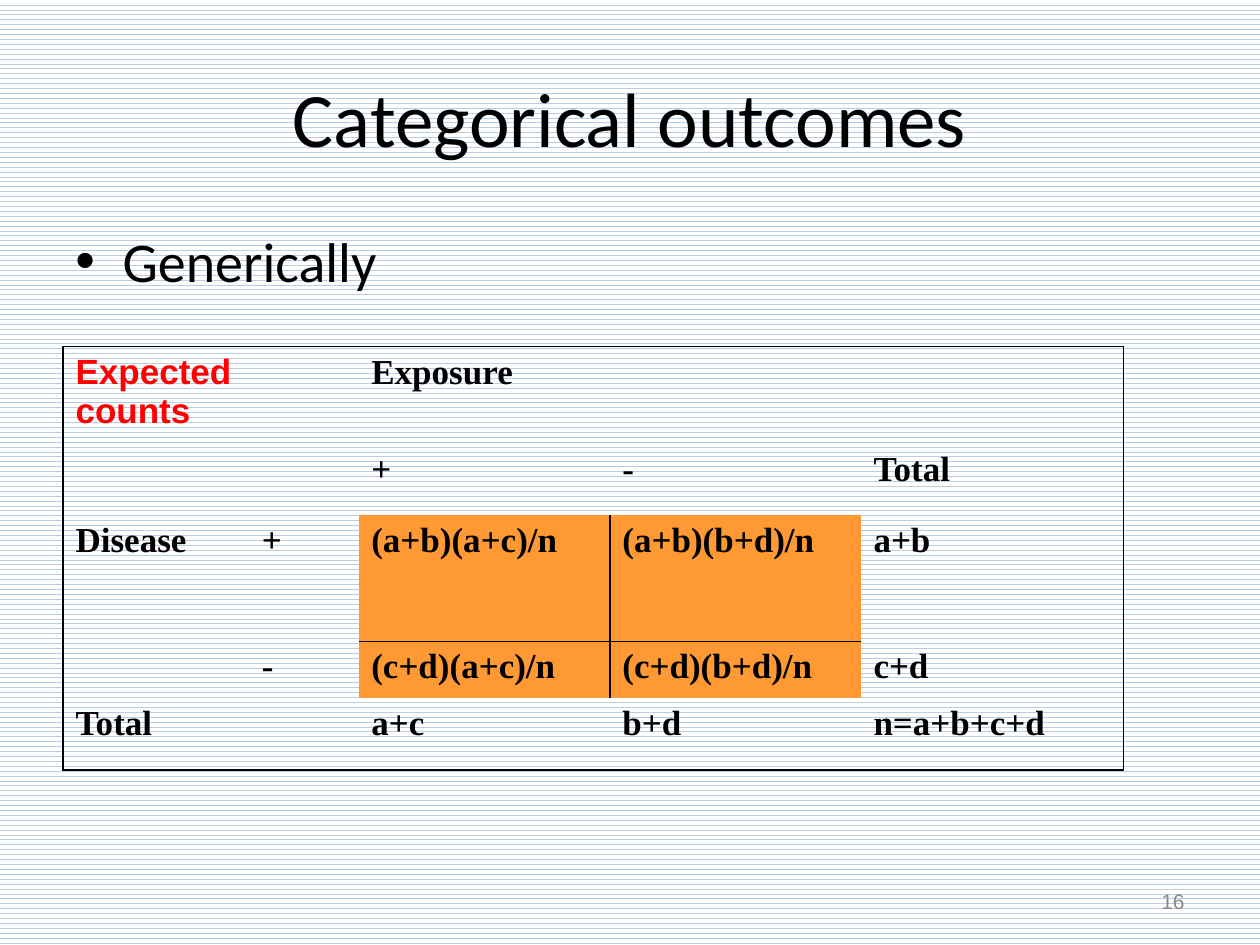
"""Build the slide on expected counts for categorical outcomes."""
from lxml.etree import SubElement
from pptx import Presentation
from pptx.dml.color import RGBColor
from pptx.enum.dml import MSO_PATTERN
from pptx.enum.text import MSO_ANCHOR, PP_ALIGN
from pptx.oxml.ns import qn
from pptx.util import Pt

BLACK = RGBColor(0x00, 0x00, 0x00)
WHITE = RGBColor(0xFF, 0xFF, 0xFF)
RED = RGBColor(0xFF, 0x00, 0x00)
GRAY = RGBColor(0x89, 0x89, 0x89)
ORANGE = RGBColor(0xFF, 0x99, 0x33)
PALE_BLUE = RGBColor(0xB9, 0xCD, 0xE5)


def write(frame, text, font, size, color, bold=False):
    frame.word_wrap = True
    frame.text = text
    para = frame.paragraphs[0]
    span = para.runs[0]
    span.font.name = font
    span.font.size = Pt(size)
    span.font.color.rgb = color
    span.font.bold = bold
    return para


def indent(para):
    properties = para._p.get_or_add_pPr()
    properties.set("marL", str(Pt(27)))
    properties.set("indent", str(-Pt(27)))
    return properties


deck = Presentation()
deck.slide_width, deck.slide_height = Pt(720), Pt(540)
page = deck.slides.add_slide(deck.slide_layouts[6])
background = page.background.fill
background.patterned()
background.pattern = MSO_PATTERN.WAVE
background.fore_color.rgb = PALE_BLUE
background.back_color.rgb = WHITE

body = page.shapes.add_textbox(Pt(36), Pt(126), Pt(648), Pt(356.4))
para = write(body.text_frame, "Generically", "Calibri", 32, BLACK)
para.space_before = Pt(6.4)
properties = indent(para)
SubElement(properties, qn("a:buFont"), typeface="Arial")
SubElement(properties, qn("a:buChar"), char="•")

number = page.shapes.add_textbox(Pt(516), Pt(500.5), Pt(168), Pt(28.75))
number.text_frame.vertical_anchor = MSO_ANCHOR.MIDDLE
para = write(number.text_frame, "16", "Arial", 12, GRAY)
para.alignment = PP_ALIGN.RIGHT

rows = [
    ["Expected counts", "", "Exposure", "", ""],
    ["", "", "+", "-", "Total"],
    ["Disease", "+", "(a+b)(a+c)/n", "(a+b)(b+d)/n", "a+b"],
    ["", "-", "(c+d)(a+c)/n", "(c+d)(b+d)/n", "c+d"],
    ["Total", "", "a+c", "b+d", "n=a+b+c+d"],
]
widths = [106.5, 62.5, 143.5, 143.5, 150]
heights = [55.5, 41, 72, 32.5, 41]
table = page.shapes.add_table(
    5, 5, Pt(36), Pt(198), Pt(sum(widths)), Pt(sum(heights))).table
table.first_row = table.horz_banding = False
for column, width in zip(table.columns, widths):
    column.width = Pt(width)
for row, height in zip(table.rows, heights):
    row.height = Pt(height)
table.cell(0, 2).merge(table.cell(0, 3))
table.cell(2, 0).merge(table.cell(3, 0))

for r, texts in enumerate(rows):
    for c, text in enumerate(texts):
        cell = table.cell(r, c)
        shaded = r in (2, 3) and c in (2, 3)
        borders = {
            "a:lnL": c == 0 or shaded and c == 3,
            "a:lnR": c == 4 or shaded and c == 2,
            "a:lnT": r == 0 or shaded and r == 3,
            "a:lnB": r == 4 or shaded and r == 2,
        }
        for tag, drawn in borders.items():
            line = SubElement(cell._tc.get_or_add_tcPr(), qn(tag), w=str(Pt(1)))
            if drawn:
                solid = SubElement(line, qn("a:solidFill"))
                SubElement(solid, qn("a:srgbClr"), val=str(BLACK))
            else:
                SubElement(line, qn("a:noFill"))
        if shaded:
            cell.fill.solid()
            cell.fill.fore_color.rgb = ORANGE
        else:
            cell.fill.background()
        if r == c == 0:
            para = write(cell.text_frame, text, "Arial", 20, RED, True)
            para.space_before = Pt(4)
        elif text:
            indent(write(cell.text_frame, text, "Times New Roman", 20, BLACK, True))

title = page.shapes.add_textbox(Pt(36), Pt(21.6), Pt(648), Pt(90))
title.text_frame.vertical_anchor = MSO_ANCHOR.MIDDLE
para = write(title.text_frame, "Categorical outcomes", "Calibri", 44, BLACK)
para.alignment = PP_ALIGN.CENTER

deck.save("out.pptx")
